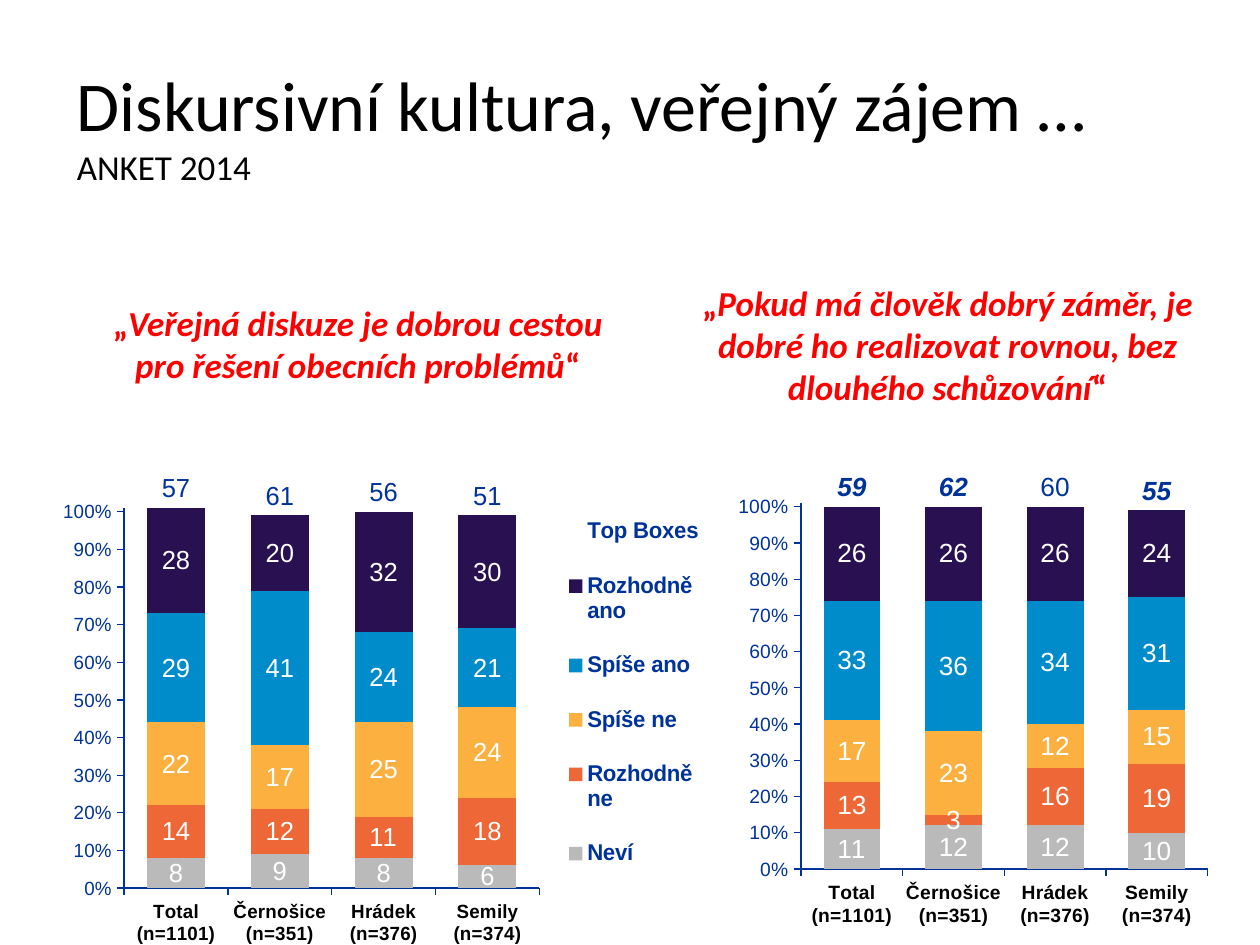
from dataclasses import dataclass, field

from lxml import etree
from pptx import Presentation
from pptx import util as u
from pptx.chart.data import CategoryChartData
from pptx.dml.color import RGBColor
from pptx.enum import chart as ch
from pptx.enum import text as tx
from pptx.oxml.ns import qn


@dataclass(frozen=True)
class Theme:
    head: str = "Calibri"
    body: str = "Arial"
    black: str = "000000"
    red: str = "FF0000"
    navy: str = "003399"
    white: str = "FFFFFF"
    bars: tuple = ("BABABA", "ED6737", "FBB040", "008BCA", "281051")
    title: int = 40
    quote: int = 20
    label: int = 15
    key: int = 13
    axis: int = 11


@dataclass
class Quote:
    text: str
    box: tuple


@dataclass
class Panel:
    box: tuple
    plot: tuple
    rows: list
    tops: dict = field(default_factory=dict)
    key: tuple = ()


T = Theme()
TOWNS = ("Total (n=1101)", "Černošice (n=351)", "Hrádek (n=376)", "Semily (n=374)")
NAMES = ("Neví", "Rozhodně ne", "Spíše ne", "Spíše ano", "Rozhodně ano", "Top Boxes")

QUOTES = [
    Quote("Veřejná diskuze je dobrou cestou pro řešení obecních problémů",
          (0.63, 2.34, 4.42, 0.77)),
    Quote("Pokud má člověk dobrý záměr, je dobré ho realizovat rovnou, "
          "bez dlouhého schůzování", (5.31, 2.17, 4.42, 1.11)),
]

# Each row is one answer across the towns; tops replace the sum labels
PANELS = [
    Panel((0.5, 3.35, 5.13, 4.15), (0.07, 0.165, 0.66, 0.73),
          [(8, 9, 8, 6), (14, 12, 11, 18), (22, 17, 25, 24),
           (29, 41, 24, 21), (28, 20, 32, 30), (56, 62, 55, 52)],
          {0: "57", 1: "61", 2: "56", 3: "51"}, (0.77, 0.13, 0.22, 0.78)),
    Panel((5.43, 3.35, 4.42, 4.15), (0.21, 0.155, 0.73, 0.7),
          [(11, 12, 12, 10), (13, 3, 16, 19), (17, 23, 12, 15),
           (33, 36, 34, 31), (26, 26, 26, 24), (59, 62, 61, 55)],
          {2: "60"}),
]


def style(font, size: int, color: str, face: str, bold=False, slant=False) -> None:
    font.size, font.name = u.Pt(size), face
    font.bold, font.italic = bold, slant
    font.color.rgb = RGBColor.from_string(color)


def place(node, spot: int, area: tuple, inner=False) -> None:
    """Give a plot area or a legend a manual layout."""
    for old in node.findall(qn("c:layout")):
        node.remove(old)
    outer = etree.Element(qn("c:layout"))
    man = etree.SubElement(outer, qn("c:manualLayout"))
    pairs = [("layoutTarget", "inner")] if inner else []
    pairs += [("xMode", "edge"), ("yMode", "edge"), *zip("xywh", area)]
    for tag, val in pairs:
        etree.SubElement(man, qn(f"c:{tag}")).set("val", str(val))
    node.insert(spot, outer)


def add_title(slide) -> None:
    title = slide.shapes.title
    title.left, title.top, title.width, title.height = map(
        u.Inches, (0.51, 0.36, 9, 1.25))
    frame = title.text_frame
    frame.text = "Diskursivní kultura, veřejný zájem …\vANKET 2014"
    frame.auto_size = tx.MSO_AUTO_SIZE.NONE
    frame.vertical_anchor = tx.MSO_ANCHOR.MIDDLE
    para = frame.paragraphs[0]
    para.alignment = tx.PP_ALIGN.LEFT
    for run, size in zip(para.runs, (T.title, T.quote)):
        style(run.font, size, T.black, T.head)


def add_quote(slide, quote: Quote) -> None:
    frame = slide.shapes.add_textbox(*map(u.Inches, quote.box)).text_frame
    frame.word_wrap = True
    frame.vertical_anchor = tx.MSO_ANCHOR.BOTTOM
    para = frame.paragraphs[0]
    para.alignment = tx.PP_ALIGN.CENTER
    para.space_before = u.Pt(4)
    for part, slant in (("„", False), (quote.text, True), ("“", False)):
        run = para.add_run()
        run.text = part
        style(run.font, T.quote, T.red, T.head, True, slant)


def set_axis(axis, color: str, bold: bool) -> None:
    axis.has_major_gridlines = False
    axis.major_tick_mark = ch.XL_TICK_MARK.OUTSIDE
    axis.minor_tick_mark = ch.XL_TICK_MARK.NONE
    axis.format.line.color.rgb = RGBColor.from_string(T.navy)
    axis.format.line.width = u.Pt(0.75)
    style(axis.tick_labels.font, T.axis, color, T.body, bold)


def set_labels(series, color: str, strong=False) -> None:
    labels = series.data_labels
    labels.show_value = True
    labels.number_format = "#,##0"
    labels.number_format_is_linked = False
    style(labels.font, T.label, color, T.body, strong, strong)


def add_panel(slide, panel: Panel) -> None:
    data = CategoryChartData()
    data.categories = TOWNS
    for name, row in zip(NAMES, panel.rows):
        data.add_series(name, row)
    chart = slide.shapes.add_chart(ch.XL_CHART_TYPE.COLUMN_STACKED,
                                   *map(u.Inches, panel.box), data).chart
    chart.has_title = False
    style(chart.font, 18, T.black, T.head)

    # Axes
    set_axis(chart.category_axis, T.black, True)
    scale = chart.value_axis
    set_axis(scale, T.navy, False)
    scale.minimum_scale, scale.maximum_scale, scale.major_unit = 0, 101, 10
    scale.tick_labels.number_format = '#,##0"%";\\-#,##0'
    scale.tick_labels.number_format_is_linked = False

    # Coloured answers, then the unfilled sums on top
    plot = chart.plots[0]
    plot.gap_width, plot.overlap, plot.vary_by_categories = 79, 100, False
    *answers, sums = plot.series
    for series, color in zip(answers, T.bars):
        series.format.fill.solid()
        series.format.fill.fore_color.rgb = RGBColor.from_string(color)
        set_labels(series, T.white)
    sums.format.fill.background()
    set_labels(sums, T.navy, True)
    sums.data_labels.position = ch.XL_LABEL_POSITION.INSIDE_BASE
    for spot, word in panel.tops.items():
        label = sums.points[spot].data_label
        label.text_frame.text = word
        style(label.text_frame.paragraphs[0].runs[0].font, T.label, T.navy, T.body)
        label.position = ch.XL_LABEL_POSITION.INSIDE_BASE

    # Layout and legend
    place(chart.element.xpath("c:chart/c:plotArea")[0], 0, panel.plot, True)
    chart.has_legend = bool(panel.key)
    if panel.key:
        chart.legend.position = ch.XL_LEGEND_POSITION.RIGHT
        chart.legend.include_in_layout = False
        style(chart.legend.font, T.key, T.navy, T.body, True)
        place(chart.element.xpath("c:chart/c:legend")[0], 1, panel.key)


def main() -> None:
    deck = Presentation()
    deck.slide_width, deck.slide_height = u.Inches(10), u.Inches(7.5)
    slide = deck.slides.add_slide(deck.slide_layouts[5])
    add_title(slide)
    for quote, panel in zip(QUOTES, PANELS):
        add_quote(slide, quote)
        add_panel(slide, panel)
    deck.save("out.pptx")


if __name__ == "__main__":
    main()
